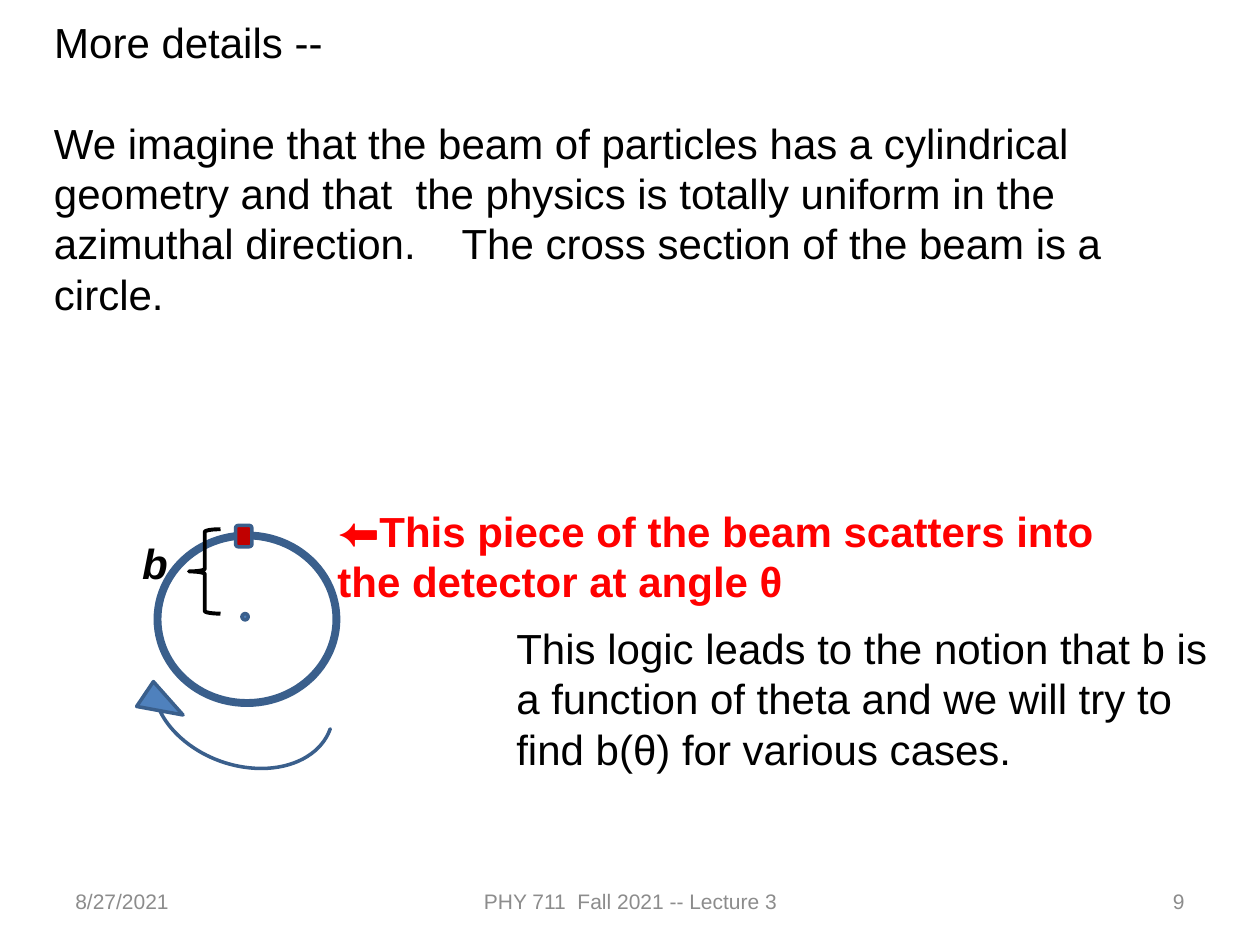
from pptx import Presentation
from pptx.dml.color import RGBColor
from pptx.enum.shapes import MSO_SHAPE
from pptx.enum.text import MSO_ANCHOR, MSO_AUTO_SIZE, PP_ALIGN
from pptx.util import Inches, Pt

COLORS = {
    "ink": "000000",
    "footer": "8C8C8C",
    "accent": "FF0000",
    "outline": "3A5F8C",
    "blue": "4F81BD",
    "target": "C00000",
}

TITLE = ("More details --", (0.33, 0.08, 8.75, 0.5))
PARAGRAPHS = [
    ("We imagine that the beam of particles has a cylindrical geometry and that  the physics "
     "is totally uniform in the azimuthal direction.    The cross section of the beam is a circle.",
     (0.33, 0.88, 8.75, 2.13), {}),
    ("b", (1.03, 4.22, 0.33, 0.5), {"bold": True, "italic": True}),
    ("⬅This piece of the beam scatters into the detector at angle θ",
     (2.58, 3.96, 6.33, 0.91), {"bold": True, "color": "accent"}),
    ("This logic leads to the notion that b is a function of theta and we will try to "
     "find b(θ) for various cases.", (4, 4.89, 5.74, 1.31), {}),
]
FOOTERS = [
    ("8/27/2021", 0.5, 2.33, PP_ALIGN.LEFT),
    ("PHY 711  Fall 2021 -- Lecture 3", 3.42, 3.17, PP_ALIGN.CENTER),
    ("9", 7.17, 2.33, PP_ALIGN.RIGHT),
]
BEAM_PARTS = [
    (MSO_SHAPE.OVAL, (1.25, 4.25, 1.42, 1.33), {"width": 4.5}),
    (MSO_SHAPE.OVAL, (1.92, 4.87, 0.05, 0.05), {"fill": "blue"}),
    (MSO_SHAPE.ROUNDED_RECTANGLE, (1.87, 4.17, 0.13, 0.17), {"fill": "target"}),
    (MSO_SHAPE.RIGHT_BRACE, (1.5, 4.2, 0.25, 0.67),
     {"line": "ink", "width": 2.25, "rotation": 180}),
]
ROTATION_ARROW = (MSO_SHAPE.CIRCULAR_ARROW, (1.01, 4.82, 1.84, 1.44),
                  {"fill": "blue", "rotation": 199.6,
                   "adjustments": (0, 11.42, 199.05, 108, 0.13)})


def rgb(name):
    return RGBColor.from_string(COLORS[name])


def write(holder, text, size=24, color="ink", bold=False, italic=False,
          align=PP_ALIGN.LEFT, anchor=MSO_ANCHOR.TOP):
    frame = holder.text_frame
    frame.word_wrap = True
    frame.auto_size = MSO_AUTO_SIZE.NONE
    frame.vertical_anchor = anchor
    paragraph = frame.paragraphs[0]
    paragraph.alignment = align
    run = paragraph.add_run()
    run.text = text
    run.font.name = "Arial"
    run.font.size = Pt(size)
    run.font.bold = bold
    run.font.italic = italic
    run.font.color.rgb = rgb(color)


def draw(slide, kind, box, fill=None, line="outline", width=2, rotation=0, adjustments=()):
    part = slide.shapes.add_shape(kind, *map(Inches, box))
    part.shadow.inherit = False
    part.rotation = rotation
    for index, value in enumerate(adjustments):
        part.adjustments[index] = value
    if fill:
        part.fill.solid()
        part.fill.fore_color.rgb = rgb(fill)
    else:
        part.fill.background()
    part.line.color.rgb = rgb(line)
    part.line.width = Pt(width)


def main():
    deck = Presentation()
    deck.slide_width, deck.slide_height = Inches(10), Inches(7.5)
    slide = deck.slides.add_slide(deck.slide_layouts[5])

    heading, heading_box = TITLE
    title = slide.shapes.title
    title.left, title.top, title.width, title.height = map(Inches, heading_box)
    write(title, heading)

    for text, left, width, align in FOOTERS:
        footer = slide.shapes.add_textbox(*map(Inches, (left, 6.95, width, 0.4)))
        write(footer, text, size=12, color="footer", align=align, anchor=MSO_ANCHOR.MIDDLE)

    for kind, box, style in BEAM_PARTS:
        draw(slide, kind, box, **style)

    for text, box, style in PARAGRAPHS:
        write(slide.shapes.add_textbox(*map(Inches, box)), text, **style)

    kind, box, style = ROTATION_ARROW
    draw(slide, kind, box, **style)

    deck.save("out.pptx")


if __name__ == "__main__":
    main()
